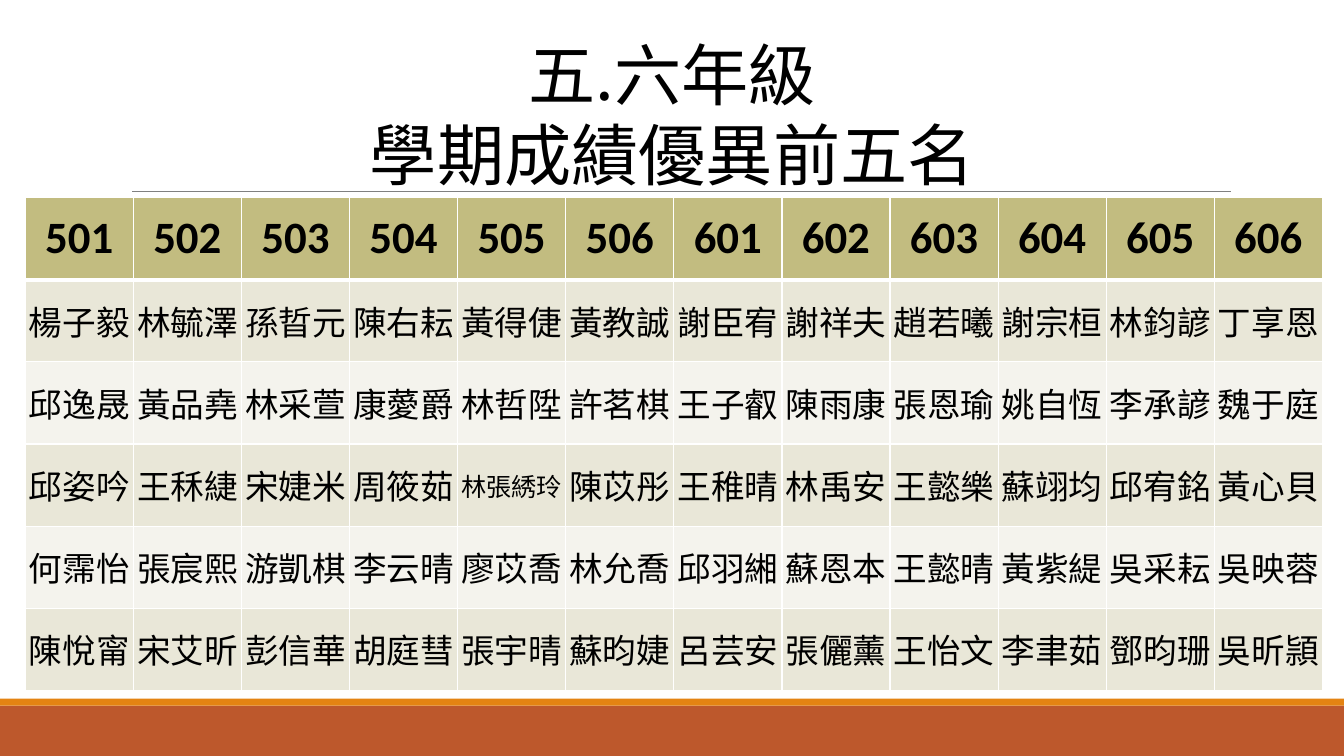
from dataclasses import dataclass

from lxml.etree import SubElement
from pptx import Presentation
from pptx.dml.color import RGBColor
from pptx.enum.shapes import MSO_CONNECTOR as Connector, MSO_SHAPE as Shape
from pptx.enum.text import MSO_ANCHOR as Anchor, PP_ALIGN as Align
from pptx.oxml import parse_xml
from pptx.oxml.ns import nsdecls, qn
from pptx.slide import Slide
from pptx.table import _Cell as Cell
from pptx.text.text import _Paragraph as Paragraph
from pptx.util import Inches, Length, Pt

WIDTH, HEIGHT = Inches(13.33), Inches(7.5)

BLACK = RGBColor(0x00, 0x00, 0x00)
WHITE = RGBColor(0xFF, 0xFF, 0xFF)
RUST = RGBColor(0xBD, 0x58, 0x2C)
ORANGE = RGBColor(0xE4, 0x83, 0x12)
GRAY = RGBColor(0x80, 0x80, 0x80)
KHAKI = RGBColor(0xC2, 0xBC, 0x80)
SAND = RGBColor(0xE9, 0xE7, 0xD8)
IVORY = RGBColor(0xF4, 0xF3, 0xED)

TITLE = "五.六年級\n學期成績優異前五名"
CLASSES = "501 502 503 504 505 506 601 602 603 604 605 606"
RANKS = [
    "楊子毅 林毓澤 孫晢元 陳右耘 黃得倢 黃教誠 謝臣宥 謝祥夫 趙若曦 謝宗桓 林鈞諺 丁享恩",
    "邱逸晟 黃品堯 林采萱 康薆爵 林哲陞 許茗棋 王子叡 陳雨康 張恩瑜 姚自恆 李承諺 魏于庭",
    "邱姿吟 王秝緁 宋婕米 周筱茹 林張綉玲 陳苡彤 王稚晴 林禹安 王懿樂 蘇翊均 邱宥銘 黃心貝",
    "何霈怡 張宸熙 游凱棋 李云晴 廖苡喬 林允喬 邱羽緗 蘇恩本 王懿晴 黃紫緹 吳采耘 吳映蓉",
    "陳悅甯 宋艾昕 彭信華 胡庭彗 張宇晴 蘇昀婕 呂芸安 張儷薰 王怡文 李聿茹 鄧昀珊 吳昕頴",
]


@dataclass(frozen=True)
class Area:
    left: float
    top: float
    width: float
    height: float

    def box(self) -> tuple[Length, Length, Length, Length]:
        return (across(self.left), down(self.top),
                across(self.width), down(self.height))


@dataclass(frozen=True)
class Band:
    area: Area
    color: RGBColor


@dataclass(frozen=True)
class Lettering:
    font: str
    size: int
    bold: bool = False


BANDS = [
    Band(Area(0, 93.33, 100, 6.67), RUST),
    Band(Area(0, 92.4, 100, 0.93), ORANGE),
]
RULE = Area(9.83, 25.33, 81.77, 0)
HONOR_ROLL = Area(1.88, 26.13, 96.53, 65.2)
HEADING = Area(26.55, 2.8, 46.95, 22.93)

HEADING_TEXT = Lettering("Noto Sans CJK JP", 48)
CLASS_TEXT = Lettering("Calibri", 32, True)
NAME_TEXT = Lettering("Noto Sans CJK SC", 24)
LONG_NAME_TEXT = Lettering("Noto Sans CJK SC", 18)


def across(percent: float) -> Length:
    return Length(round(WIDTH * percent / 100))


def down(percent: float) -> Length:
    return Length(round(HEIGHT * percent / 100))


def letter(paragraph: Paragraph, style: Lettering) -> None:
    paragraph.alignment = Align.CENTER
    for run in paragraph.runs:
        run.font.name = style.font
        run.font.size = Pt(style.size)
        run.font.bold = style.bold
        run.font.color.rgb = BLACK
        SubElement(run.font._element, qn("a:ea"), typeface=style.font)


def draw_band(slide: Slide, band: Band) -> None:
    strip = slide.shapes.add_shape(Shape.RECTANGLE, *band.area.box())
    strip.shadow.inherit = False
    strip.fill.solid()
    strip.fill.fore_color.rgb = band.color
    strip.line.fill.background()


def draw_rule(slide: Slide) -> None:
    left, top, width, height = RULE.box()
    rule = slide.shapes.add_connector(
        Connector.STRAIGHT, left, top, left + width, top + height)
    rule.line.color.rgb = GRAY
    rule.line.width = Pt(0.5)
    SubElement(rule._element.spPr, qn("a:effectLst"))


def border(cell: Cell, top: int, bottom: int) -> None:
    sides = {"lnL": 1, "lnR": 1, "lnT": top, "lnB": bottom}
    properties = cell._tc.get_or_add_tcPr()
    for position, (side, points) in enumerate(sides.items()):
        properties.insert(position, parse_xml(
            f'<a:{side} {nsdecls("a")} w="{Pt(points)}"><a:solidFill>'
            f'<a:srgbClr val="{WHITE}"/></a:solidFill></a:{side}>'))


def fill_cell(cell: Cell, text: str, style: Lettering, color: RGBColor) -> None:
    cell.text_frame.text = text
    cell.vertical_anchor = Anchor.MIDDLE
    cell.fill.solid()
    cell.fill.fore_color.rgb = color
    letter(cell.text_frame.paragraphs[0], style)


def draw_honor_roll(slide: Slide) -> None:
    classes = CLASSES.split()
    roll = slide.shapes.add_table(
        len(RANKS) + 1, len(classes), *HONOR_ROLL.box()).table
    for column, class_name in enumerate(classes):
        header = roll.cell(0, column)
        fill_cell(header, class_name, CLASS_TEXT, KHAKI)
        border(header, top=1, bottom=3)
    for rank, names in enumerate(RANKS, start=1):
        for column, student in enumerate(names.split()):
            cell = roll.cell(rank, column)
            style = LONG_NAME_TEXT if len(student) > 3 else NAME_TEXT
            fill_cell(cell, student, style, SAND if rank % 2 else IVORY)
            cell.margin_left = cell.margin_right = Inches(0.01)
            cell.margin_top = cell.margin_bottom = Inches(0.01)
            border(cell, top=3 if rank == 1 else 1, bottom=1)


def draw_heading(slide: Slide) -> None:
    frame = slide.shapes.add_textbox(*HEADING.box()).text_frame
    frame.word_wrap = False
    frame.margin_top = down(1.73)
    frame.margin_bottom = 0
    frame.text = TITLE
    for paragraph in frame.paragraphs:
        paragraph.line_spacing = Pt(57)
        letter(paragraph, HEADING_TEXT)


def main() -> None:
    deck = Presentation()
    deck.slide_width, deck.slide_height = WIDTH, HEIGHT
    slide = deck.slides.add_slide(deck.slide_layouts[6])
    for band in BANDS:
        draw_band(slide, band)
    draw_rule(slide)
    draw_honor_roll(slide)
    draw_heading(slide)
    deck.save("out.pptx")


if __name__ == "__main__":
    main()
